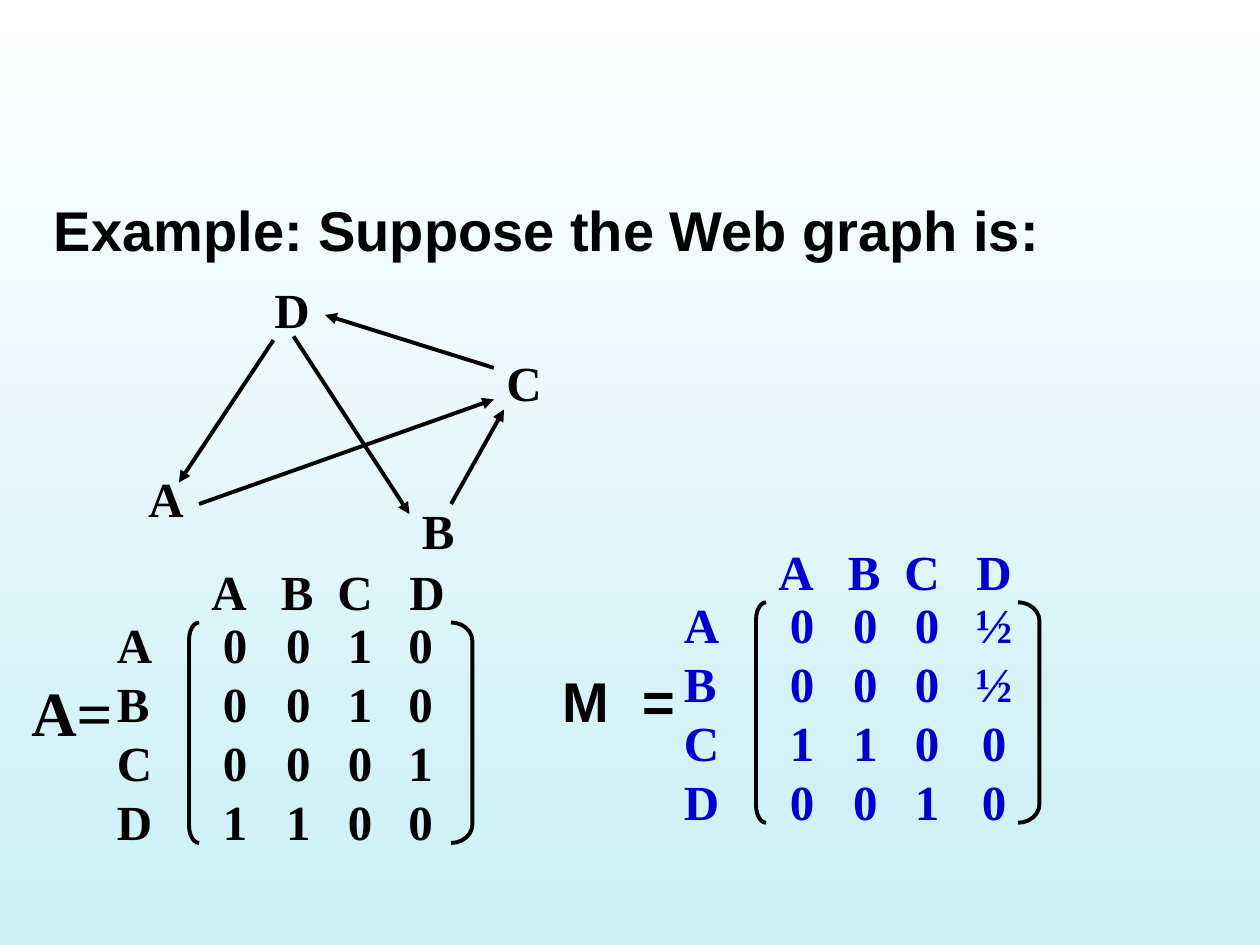
from dataclasses import dataclass

import pptx
import pptx.dml.color
import pptx.enum.shapes
import pptx.oxml
import pptx.oxml.ns
import pptx.util

Inches = pptx.util.Inches
Pt = pptx.util.Pt
RGB = pptx.dml.color.RGBColor.from_string
Shape = pptx.enum.shapes.MSO_SHAPE


@dataclass(frozen=True)
class Theme:
    black: str = "000000"
    blue: str = "0000CC"
    sky_top: str = "FFFFFF"
    sky_bottom: str = "CAEFF6"
    sans: str = "Arial"
    serif: str = "Times New Roman"
    label_size: int = 28
    heading_size: int = 32
    equation_size: int = 36
    line_width: float = 2.25


THEME = Theme()
LABELS = ["A", "B", "C", "D"]
NODES = {"A": (1.08, 3.67), "B": (3.25, 3.92), "C": (3.92, 2.75), "D": (2.08, 2.17)}
EDGES = [
    ((2.33, 2.67), (3.25, 4.08)),
    ((3.92, 2.92), (2.58, 2.5)),
    ((1.58, 4), (3.92, 3.17)),
    ((2.17, 2.7), (1.42, 3.83)),
    ((3.58, 4), (4, 3.25)),
]
ADJACENCY = ["0010", "0010", "0001", "1100"]
TRANSITION = ["000½", "000½", "1100", "0010"]


def add_element(parent, tag, **attributes):
    element = pptx.oxml.parse_xml(f"<a:{tag} {pptx.oxml.ns.nsdecls('a')}/>")
    for name, value in attributes.items():
        element.set(name, str(value))
    parent.append(element)
    return element


def paint_background(page):
    fill = page.background.fill
    fill.gradient()
    fill.gradient_angle = 270
    for stop, color, position in zip(
        fill.gradient_stops, (THEME.sky_top, THEME.sky_bottom), (0, 1)
    ):
        stop.color.rgb = RGB(color)
        stop.position = position


def add_text(page, left, top, width, height, lines, size=THEME.label_size,
             face=THEME.serif, color=THEME.black, tabs=(), tab_align="ctr"):
    box = page.shapes.add_textbox(Inches(left), Inches(top), Inches(width), Inches(height))
    frame = box.text_frame
    frame.word_wrap = True
    for index, line in enumerate(lines):
        para = frame.paragraphs[0] if index == 0 else frame.add_paragraph()
        para.text = line
        if tabs:
            tab_list = add_element(para._p.get_or_add_pPr(), "tabLst")
            for stop in tabs:
                add_element(tab_list, "tab", pos=Inches(stop), algn=tab_align)
        para.font.name = face
        para.font.size = Pt(size)
        para.font.bold = True
        para.font.color.rgb = RGB(color)


def style_line(line):
    line.color.rgb = RGB(THEME.black)
    line.width = Pt(THEME.line_width)


def add_arrow(page, start, end):
    arrow = page.shapes.add_connector(
        pptx.enum.shapes.MSO_CONNECTOR.STRAIGHT, *map(Inches, (*start, *end))
    )
    style_line(arrow.line)
    add_element(arrow.line._get_or_add_ln(), "tailEnd", type="triangle")
    add_element(arrow._element.spPr, "effectLst")


def add_bracket(page, kind, left, top, width, curve):
    bracket = page.shapes.add_shape(
        kind, Inches(left), Inches(top), Inches(width), Inches(1.75)
    )
    bracket.adjustments[0] = curve
    bracket.fill.background()
    bracket.shadow.inherit = False
    style_line(bracket.line)


def add_matrix(page, left, top, rows, color, last_column):
    add_text(page, left, top, 0.5, 1.97, LABELS, color=color)
    add_text(page, left + 0.75, top - 0.42, 2.08, 0.57, ["\t".join(LABELS)],
             color=color, tabs=(0.68, 1.14, 1.71))
    add_text(page, left + 0.84, top, 2.05, 1.97, ["\t".join(row) for row in rows],
             color=color, tabs=(0.6, 1.09, last_column))
    add_bracket(page, Shape.LEFT_BRACKET, left + 0.67, top + 0.11, 0.08, 1.75)
    add_bracket(page, Shape.RIGHT_BRACKET, left + 2.75, top + 0.11, 0.17, 0.875)


def add_graph(page):
    for start, end in EDGES:
        add_arrow(page, start, end)
    for name, (left, top) in NODES.items():
        add_text(page, left, top, 0.5, 0.57, [name])


def main():
    deck = pptx.Presentation()
    deck.slide_width, deck.slide_height = Inches(10), Inches(7.5)
    page = deck.slides.add_slide(deck.slide_layouts[6])
    paint_background(page)
    add_text(page, 0.33, 1.5, 9.42, 0.65, ["Example: Suppose the Web graph is:"],
             size=THEME.heading_size, face=THEME.sans)
    add_graph(page)
    add_text(page, 0.15, 5.3, 0.9, 0.7, ["A="], size=THEME.equation_size)
    add_matrix(page, 0.83, 4.83, ADJACENCY, THEME.black, last_column=1.57)
    add_text(page, 4.37, 5.24, 1.1, 0.65, ["M\t="], size=THEME.heading_size,
             face=THEME.sans, tabs=(0.63,), tab_align="l")
    add_matrix(page, 5.33, 4.67, TRANSITION, THEME.blue, last_column=1.62)
    deck.save("out.pptx")


if __name__ == "__main__":
    main()
